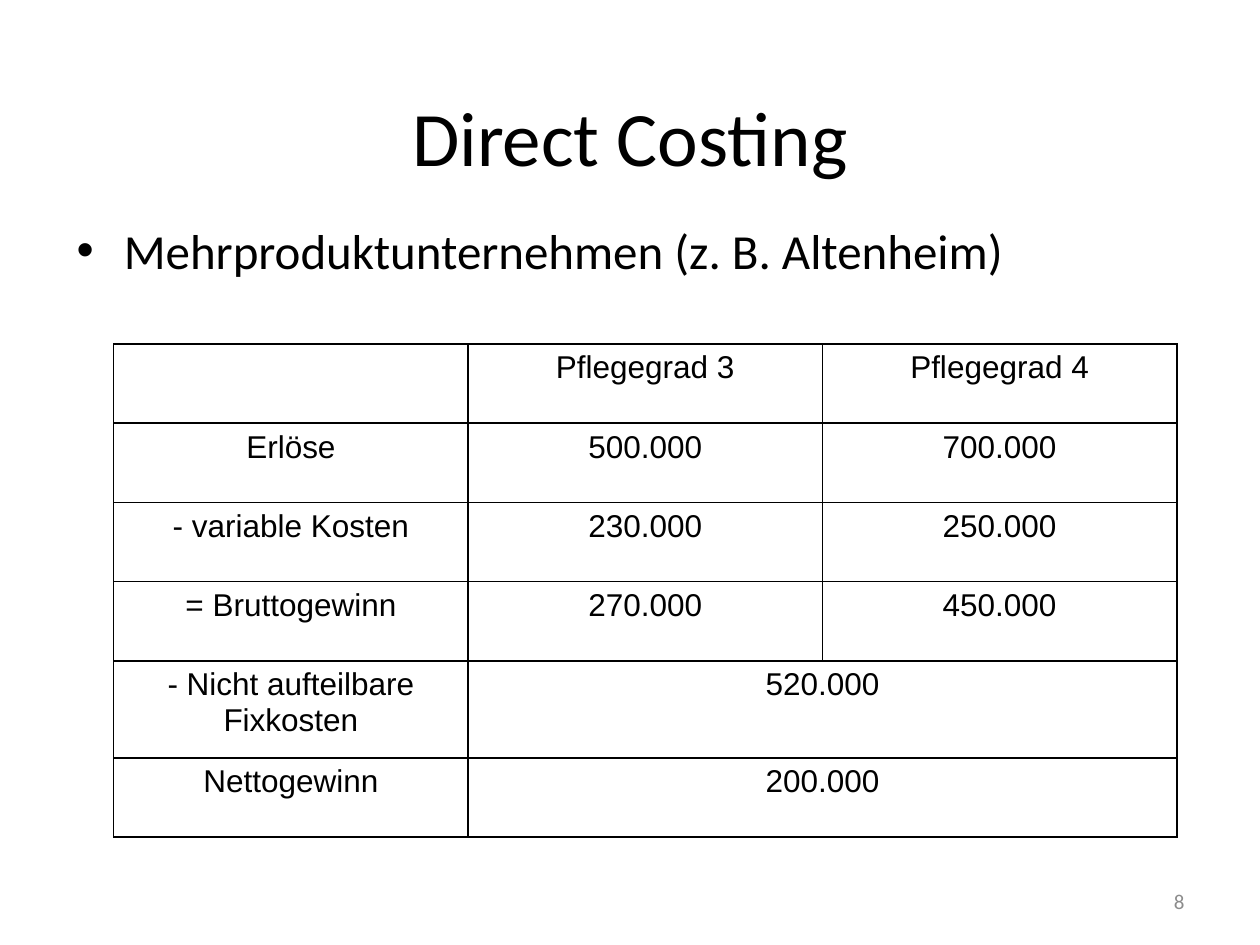
from lxml.etree import SubElement
from pptx import Presentation
from pptx.dml.color import RGBColor
from pptx.enum.text import MSO_ANCHOR, PP_ALIGN
from pptx.oxml.ns import qn
from pptx.util import Pt

BLACK = RGBColor(0, 0, 0)
WHITE = RGBColor(255, 255, 255)
GRAY = RGBColor(0x8C, 0x8C, 0x8C)
ROWS = [
    ("", "Pflegegrad 3", "Pflegegrad 4"),
    ("Erlöse", "500.000", "700.000"),
    ("- variable Kosten", "230.000", "250.000"),
    ("= Bruttogewinn", "270.000", "450.000"),
    ("- Nicht aufteilbare\nFixkosten", "520.000"),
    ("Nettogewinn", "200.000"),
]


def set_text(frame, text, size, face, color, align):
    frame.text = text
    frame.word_wrap = True
    for para in frame.paragraphs:
        para.alignment = align
        font = para.font
        font.size, font.name = Pt(size), face
        font.color.rgb = color


def add_title(slide, text):
    title = slide.shapes.title
    title.left, title.top = Pt(36), Pt(23)
    title.width, title.height = Pt(648), Pt(108.7)
    set_text(title.text_frame, text, 44, "Calibri", BLACK, PP_ALIGN.CENTER)
    title.text_frame.vertical_anchor = MSO_ANCHOR.MIDDLE


def add_text(slide, box, text, size, color, align):
    shape = slide.shapes.add_textbox(*map(Pt, box))
    set_text(shape.text_frame, text, size, "Calibri", color, align)
    return shape.text_frame


def add_bullet(para, indent):
    props = para._p.get_or_add_pPr()
    props.set("marL", str(Pt(indent)))
    props.set("indent", str(-Pt(indent)))
    para.space_before = Pt(5.6)
    SubElement(props, qn("a:buFont"), typeface="Arial")
    SubElement(props, qn("a:buChar"), char="•")


def style_cell(cell):
    props = cell._tc.get_or_add_tcPr()
    for side in ("lnL", "lnR", "lnT", "lnB"):
        line = SubElement(props, qn(f"a:{side}"), w=str(Pt(1)))
        fill = SubElement(line, qn("a:solidFill"))
        SubElement(fill, qn("a:srgbClr"), val=str(BLACK))
    cell.fill.solid()
    cell.fill.fore_color.rgb = WHITE


def add_grid(slide, rows):
    width = 202.5
    count = len(rows[0])
    highs = [55.4 if "\n" in row[0] else 45.3 for row in rows]
    frame = slide.shapes.add_table(
        len(rows), count, Pt(65), Pt(196.5), Pt(width * count), Pt(sum(highs)))
    table = frame.table
    for col in table.columns:
        col.width = Pt(width)
    for r, (row, high) in enumerate(zip(rows, highs)):
        table.rows[r].height = Pt(high)
        for c in range(count):
            style_cell(table.cell(r, c))
        if len(row) < count:
            table.cell(r, len(row) - 1).merge(table.cell(r, count - 1))
        for c, text in enumerate(row):
            set_text(table.cell(r, c).text_frame, text, 18, "Arial", BLACK,
                     PP_ALIGN.CENTER)


def main():
    deck = Presentation()
    deck.slide_width, deck.slide_height = Pt(720), Pt(540)
    slide = deck.slides.add_slide(deck.slide_layouts[5])
    add_title(slide, "Direct Costing")
    body = add_text(slide, (36.7, 122.4, 640.8, 324),
                    "Mehrproduktunternehmen (z. B. Altenheim)", 28, BLACK,
                    PP_ALIGN.LEFT)
    add_bullet(body.paragraphs[0], 27)
    add_grid(slide, ROWS)
    page = add_text(slide, (516, 500.4, 168, 28.8), "8", 12, GRAY,
                    PP_ALIGN.RIGHT)
    page.vertical_anchor = MSO_ANCHOR.MIDDLE
    deck.save("out.pptx")


if __name__ == "__main__":
    main()
